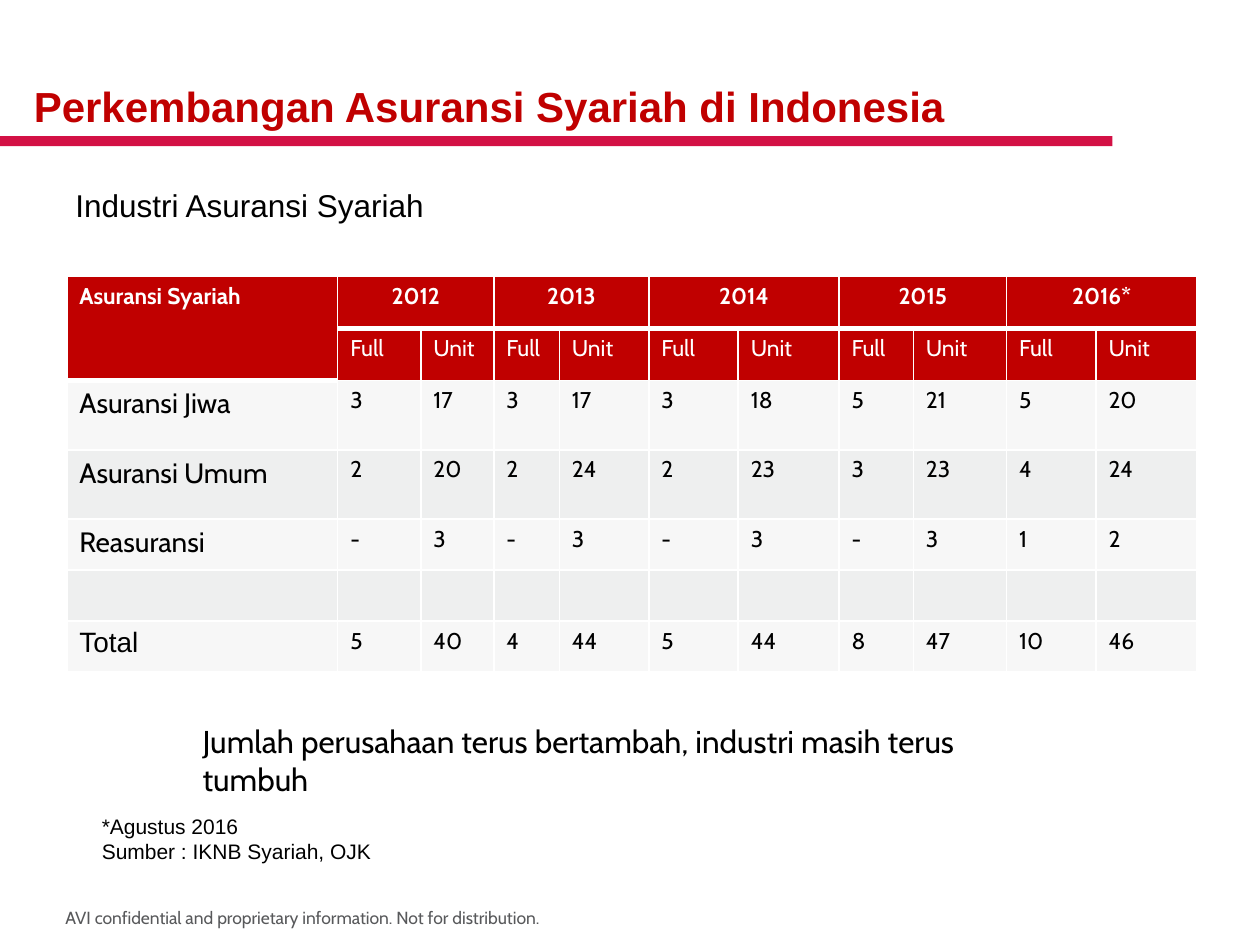
from lxml import etree
from pptx import Presentation
from pptx.dml.color import RGBColor
from pptx.enum.shapes import MSO_SHAPE
from pptx.enum.text import MSO_ANCHOR, MSO_AUTO_SIZE, PP_ALIGN
from pptx.oxml.ns import qn
from pptx.util import Inches, Pt

RECTANGLE = MSO_SHAPE.RECTANGLE
TOP, BOTTOM = MSO_ANCHOR.TOP, MSO_ANCHOR.BOTTOM
GROW, FIXED = MSO_AUTO_SIZE.SHAPE_TO_FIT_TEXT, MSO_AUTO_SIZE.NONE
LEFT, CENTER = PP_ALIGN.LEFT, PP_ALIGN.CENTER

SLIDE_W, SLIDE_H = Inches(10), Inches(7.5)
COLUMN, ROW = SLIDE_W / 100, SLIDE_H / 75

COLORS = {
    "red": "C00000",
    "rule": "D31145",
    "black": "000000",
    "gray": "58595B",
    "white": "FFFFFF",
    "odd": "F7F7F7",
    "even": "EEEFEF",
}
YEARS = ["2012", "2013", "2014", "2015", "2016*"]
COMPANIES = [
    ("Asuransi Jiwa", "3 17 3 17 3 18 5 21 5 20"),
    ("Asuransi Umum", "2 20 2 24 2 23 3 23 4 24"),
    ("Reasuransi", "- 3 - 3 - 3 - 3 1 2"),
    ("", ""),
    ("Total", "5 40 4 44 5 44 8 47 10 46"),
]
TABLE_COLUMNS = [21.5, 6.6, 5.8, 5.2, 7.1, 7.1, 8, 5.9, 7.4, 7.1, 8]
TABLE_ROWS = [4.15, 4.15, 5.5, 5.5, 4.05, 4.05, 4.05]


def color(name):
    return RGBColor.from_string(COLORS[name])


def place(box):
    left, top, width, height = box
    return (round(left * COLUMN), round(top * ROW),
            round(width * COLUMN), round(height * ROW))


def add_run(paragraph, text, size, font, ink, bold=False):
    run = paragraph.add_run()
    run.text = text
    run.font.size = Pt(size)
    run.font.name = font
    run.font.bold = bold
    run.font.color.rgb = color(ink)


def add_text(slide, box, lines, size, font, ink,
             bold=False, anchor=TOP, fit=GROW, wrap=True):
    frame = slide.shapes.add_textbox(*place(box)).text_frame
    frame.word_wrap = wrap
    frame.auto_size = fit
    frame.vertical_anchor = anchor
    for index, line in enumerate(lines):
        paragraph = frame.add_paragraph() if index else frame.paragraphs[0]
        add_run(paragraph, line, size, font, ink, bold)


def add_heading(slide, box):
    left, top, width, height = box
    rule = slide.shapes.add_shape(RECTANGLE, *place((0, top + height - 0.1, 88.3, 0.8)))
    rule.shadow.inherit = False
    rule.fill.solid()
    rule.fill.fore_color.rgb = color("rule")
    rule.line.fill.background()
    add_text(slide, box, ["Perkembangan Asuransi Syariah di Indonesia"],
             24, "Arial", "red", bold=True, anchor=BOTTOM, fit=FIXED)


def style_cell(cell, fill, top=1, bottom=1):
    properties = cell._tc.get_or_add_tcPr()
    for side, width in (("lnL", 1), ("lnR", 1), ("lnT", top), ("lnB", bottom)):
        border = etree.SubElement(properties, qn(f"a:{side}"), w=str(Pt(width)))
        paint = etree.SubElement(border, qn("a:solidFill"))
        etree.SubElement(paint, qn("a:srgbClr"), val=COLORS["white"])
    cell.fill.solid()
    cell.fill.fore_color.rgb = color(fill)


def fill_cell(cell, text, size, font, ink, bold=False, align=LEFT):
    paragraph = cell.text_frame.paragraphs[0]
    paragraph.alignment = align
    add_run(paragraph, text, size, font, ink, bold)


def add_company_table(slide, box):
    table = slide.shapes.add_table(
        len(TABLE_ROWS), len(TABLE_COLUMNS), *place(box)).table
    for column, width in zip(table.columns, TABLE_COLUMNS):
        column.width = round(width * COLUMN)
    for row, height in zip(table.rows, TABLE_ROWS):
        row.height = round(height * ROW)

    for column in range(len(TABLE_COLUMNS)):
        style_cell(table.cell(0, column), "red", bottom=3)
        style_cell(table.cell(1, column), "red", top=3)
    table.cell(0, 0).merge(table.cell(1, 0))
    fill_cell(table.cell(0, 0), "Asuransi Syariah", 13, "Cabin", "white", bold=True)
    for index, year in enumerate(YEARS):
        full, unit = 2 * index + 1, 2 * index + 2
        table.cell(0, full).merge(table.cell(0, unit))
        fill_cell(table.cell(0, full), year, 13, "Cabin", "white", True, CENTER)
        fill_cell(table.cell(1, full), "Full", 13, "Cabin", "white")
        fill_cell(table.cell(1, unit), "Unit", 13, "Cabin", "white")

    for row, (label, counts) in enumerate(COMPANIES, start=2):
        for column in range(len(TABLE_COLUMNS)):
            style_cell(table.cell(row, column), "even" if row % 2 else "odd")
        if label:
            font = "Arial" if label == "Total" else "Cabin"
            fill_cell(table.cell(row, 0), label, 16, font, "black")
        for column, count in enumerate(counts.split(), start=1):
            fill_cell(table.cell(row, column), count, 13, "Cabin", "black")


def add_remarks(slide, box):
    left, top, width, height = box
    add_text(slide, (left + 8, top, width, 4),
             ["Jumlah perusahaan terus bertambah, industri masih terus tumbuh"],
             18, "Cabin", "black")
    add_text(slide, (left, top + 7.3, 36.7, height - 7.3),
             ["*Agustus 2016", "Sumber : IKNB Syariah, OJK"], 12, "Arial", "black")


def add_footer(slide, box):
    add_text(slide, box,
             ["AVI confidential and proprietary information. Not for distribution."],
             10, "Cabin", "gray", wrap=False)


def main():
    deck = Presentation()
    deck.slide_width, deck.slide_height = SLIDE_W, SLIDE_H
    slide = deck.slides.add_slide(deck.slide_layouts[6])
    add_heading(slide, (1.7, 2.6, 80, 8.3))
    add_text(slide, (5, 14.3, 69.2, 4.2), ["Industri Asuransi Syariah"],
             18, "Arial", "black")
    add_company_table(slide, (5.3, 21.9, 89.7, 31.45))
    add_remarks(slide, (7.1, 56.8, 70, 12.3))
    add_footer(slide, (4.2, 71.5, 41.2, 2.7))
    deck.save("out.pptx")


if __name__ == "__main__":
    main()
